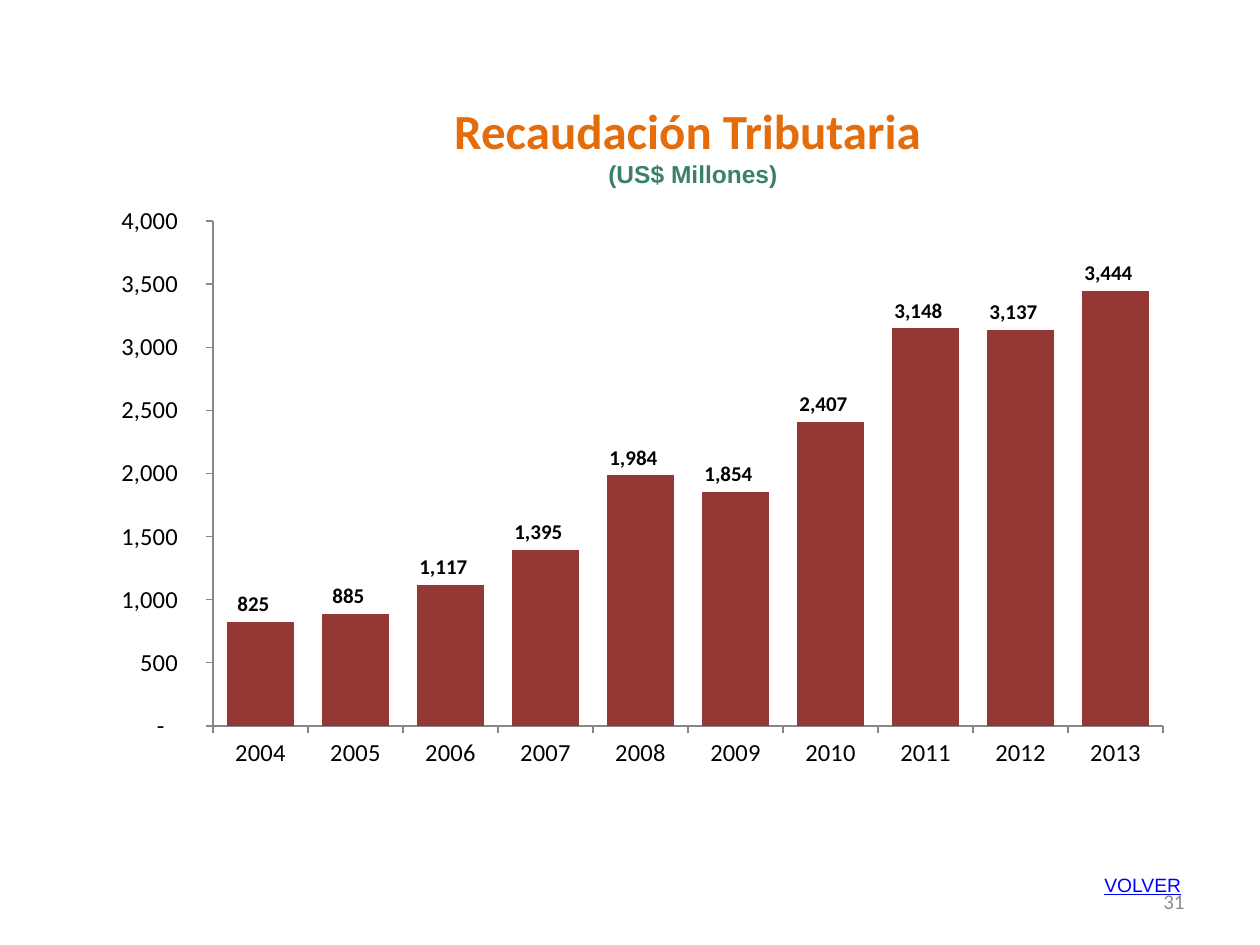
import pptx
import pptx.chart.data
import pptx.dml.color
import pptx.enum.chart
import pptx.enum.text
import pptx.oxml
import pptx.oxml.ns
import pptx.util

SCALE = 914400 / 126
ALIGN = pptx.enum.text.PP_ALIGN
CHART = pptx.enum.chart
YEARS = [str(year) for year in range(2004, 2014)]
TAXES = [825, 885, 1117, 1395, 1984, 1854, 2407, 3148, 3137, 3444]
MONEY = '_-* #,##0\\ _€_-;\\-* #,##0\\ _€_-;_-* "-"?\\ _€_-;_-@_-'


def px(size):
    """Turn pixels into EMU."""
    return pptx.util.Emu(round(size * SCALE))


def tint(hue):
    """Turn a hex string into a colour."""
    return pptx.dml.color.RGBColor.from_string(hue)


def put(item, form):
    """Set each value of a format dict on an item."""
    for name, value in form.items():
        setattr(item, name, value)


class Deck:
    """Hold the style and the current slide."""

    fonts = {"body": "Calibri", "note": "Arial"}
    hues = {"title": "E46C0A", "unit": "3B816A", "link": "0000FF", "page": "8C8C8C",
            "bar": "953735", "ink": "000000", "axis": "878787"}

    def __init__(self, wide, high):
        """Start a deck with one blank slide."""
        self.show = pptx.Presentation()
        put(self.show, {"slide_width": px(wide), "slide_height": px(high)})
        self.slide = self.show.slides.add_slide(self.show.slide_layouts[6])

    def style(self, font, size, hue, face="body", **form):
        """Style a font."""
        put(font, {"name": self.fonts[face], "size": pptx.util.Pt(size), **form})
        font.color.rgb = tint(self.hues[hue])

    def text(self, area, lines, align=ALIGN.LEFT, anchor="TOP"):
        """Add a text box whose lines share one paragraph."""
        frame = self.slide.shapes.add_textbox(*map(px, area)).text_frame
        put(frame, {"word_wrap": True,
                    "vertical_anchor": getattr(pptx.enum.text.MSO_ANCHOR, anchor)})
        para = frame.paragraphs[0]
        para.alignment = align
        for row, (words, form) in enumerate(lines):
            if row:
                para.add_line_break()
            run = para.add_run()
            run.text = words
            self.style(run.font, **form)

    def place(self, chart, area, plot):
        """Fix the inner plot area within the chart."""
        left, top, wide, high = area
        parts = {"x": (plot[0] - left) / wide, "y": (plot[1] - top) / high,
                 "w": plot[2] / wide, "h": plot[3] / high}
        marks = "".join(f'<c:{key}Mode val="edge"/>' for key in "xy")
        sizes = "".join(f'<c:{key} val="{part:.4f}"/>' for key, part in parts.items())
        space = pptx.oxml.ns.nsdecls("c")
        node = pptx.oxml.parse_xml(
            f'<c:layout {space}><c:manualLayout><c:layoutTarget val="inner"/>'
            f"{marks}{sizes}</c:manualLayout></c:layout>")
        field = chart.element.find(".//" + pptx.oxml.ns.qn("c:plotArea"))
        for old in field.findall(pptx.oxml.ns.qn("c:layout")):
            field.remove(old)
        field.insert(0, node)

    def bars(self, area, plot, cats, vals):
        """Add a column chart with value labels."""
        data = pptx.chart.data.CategoryChartData(number_format=MONEY)
        data.categories = cats
        data.add_series("Recaudación", vals)
        kind = CHART.XL_CHART_TYPE.COLUMN_CLUSTERED
        chart = self.slide.shapes.add_chart(kind, *map(px, area), data).chart
        put(chart, {"has_legend": False, "has_title": False})
        self.style(chart.font, 10, "ink")
        for axis in (chart.category_axis, chart.value_axis):
            put(axis, {"has_major_gridlines": False,
                       "major_tick_mark": CHART.XL_TICK_MARK.OUTSIDE})
            self.style(axis.tick_labels.font, 14, "ink")
            axis.format.line.color.rgb = tint(self.hues["axis"])
            axis.format.line.width = pptx.util.Pt(0.75)
        put(chart.value_axis, {"minimum_scale": 0, "maximum_scale": 4000, "major_unit": 500})
        form = {"number_format": MONEY, "number_format_is_linked": False}
        put(chart.value_axis.tick_labels, form)
        group = chart.plots[0]
        put(group, {"gap_width": 43, "vary_by_categories": False, "has_data_labels": True})
        put(group.data_labels, {**form, "show_value": True,
                                "position": CHART.XL_LABEL_POSITION.OUTSIDE_END})
        self.style(group.data_labels.font, 12, "ink", bold=True)
        fill = group.series[0].format.fill
        fill.solid()
        fill.fore_color.rgb = tint(self.hues["bar"])
        self.place(chart, area, plot)


def main():
    """Build the tax revenue slide."""
    deck = Deck(1260, 945)
    deck.text((903, 876, 294, 50), [("31", {"size": 12, "hue": "page"})],
              ALIGN.RIGHT, "MIDDLE")
    deck.text((126, 96, 1134, 97), [
        ("Recaudación Tributaria ", {"size": 28, "hue": "title", "bold": True}),
        ("(US$ Millones)", {"size": 14, "hue": "unit", "face": "note", "bold": True}),
    ], ALIGN.CENTER, "MIDDLE")
    deck.text((1092, 867, 129, 37), [
        ("VOLVER", {"size": 11, "hue": "link", "face": "note", "underline": True})])
    deck.bars((95, 195, 1091, 586), (213, 221, 950, 505), YEARS, TAXES)
    deck.show.save("out.pptx")


if __name__ == "__main__":
    main()
